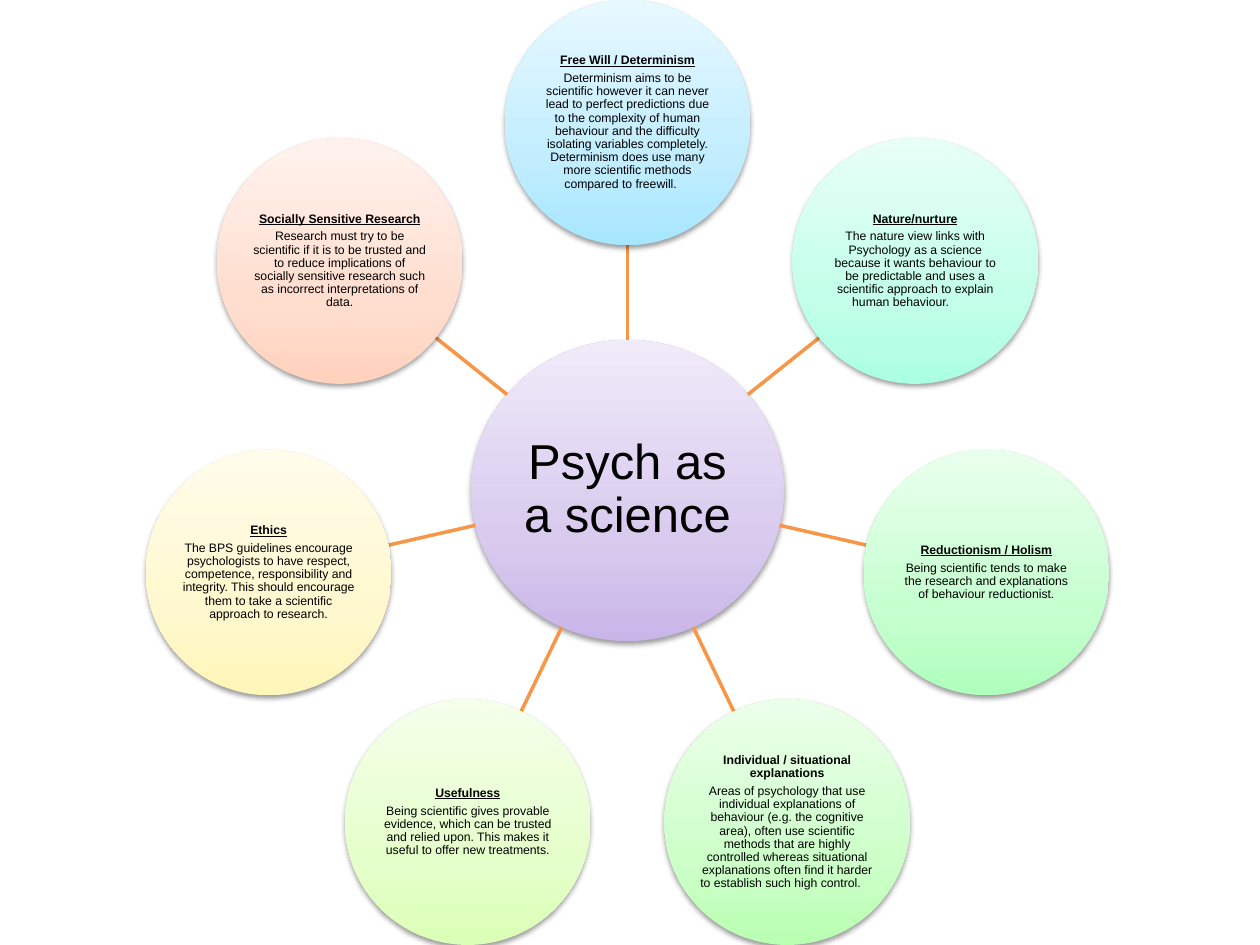
from math import cos, hypot, radians, sin

from pptx import Presentation
from pptx.dml.color import RGBColor
from pptx.enum.shapes import MSO_CONNECTOR as Connector, MSO_SHAPE as Shape
from pptx.enum.text import MSO_ANCHOR as Anchor, PP_ALIGN as Align
from pptx.oxml import parse_xml
from pptx.oxml.ns import nsdecls
from pptx.util import Cm, Pt

# Content: heading, underlined, body, gradient from bottom to top; clockwise from the top
HUB_TEXT = "Psych as a science"
HUB_COLORS = ("C9B5E8", "D8CBEE", "F0EAF9")
TOPICS = [
    ("Free Will / Determinism", True,
     "Determinism aims to be scientific however it can never lead to perfect predictions "
     "due to the complexity of human behaviour and the difficulty isolating variables "
     "completely. Determinism does use many more scientific methods compared to freewill.\t",
     ("A7E6FF", "C1EDFF", "E7F8FF")),
    ("Nature/nurture", True,
     "The nature view links with Psychology as a science because it wants behaviour to be "
     "predictable and uses a scientific approach to explain human behaviour.\t",
     ("ABFFE3", "C3FFEA", "E8FFF7")),
    ("Reductionism / Holism", True,
     "Being scientific tends to make the research and explanations of behaviour reductionist.",
     ("AFFFBD", "C6FFD0", "E9FFED")),
    ("Individual / situational explanations", False,
     "Areas of psychology that use individual explanations of behaviour (e.g. the cognitive "
     "area), often use scientific methods that are highly controlled whereas situational "
     "explanations often find it harder to establish such high control.\t",
     ("B9FFB2", "CDFFC9", "ECFFEA")),
    ("Usefulness", True,
     "Being scientific gives provable evidence, which can be trusted and relied upon. "
     "This makes it useful to offer new treatments.",
     ("DBFFB6", "E5FFCB", "F5FFEB")),
    ("Ethics", True,
     "The BPS guidelines encourage psychologists to have respect, competence, responsibility "
     "and integrity. This should encourage them to take a scientific approach to research.",
     ("FFF6B9", "FFF8CE", "FFFCEC")),
    ("Socially Sensitive Research", True,
     "Research must try to be scientific if it is to be trusted and to reduce implications of "
     "socially sensitive research such as incorrect interpretations of data.",
     ("FFD2BD", "FFDED0", "FFF2ED")),
]

# Layout in centimetres
CENTER_X, CENTER_Y = 12.65, 9.89
HUB_WIDTH, HUB_HEIGHT = 6.3, 6.07
TOPIC_SIZE = 4.95
ORBIT = 7.42
STOPS = (0, 35, 100)


def color(value):
    return RGBColor.from_string(value)


def add_bubble(page, x, y, width, height, colors, inset):
    """Add a shaded ellipse centred on x, y and return its text frame."""
    bubble = page.shapes.add_shape(Shape.OVAL, Cm(x - width / 2), Cm(y - height / 2),
                                   Cm(width), Cm(height))
    stops = "".join(f'<a:gs pos="{stop * 1000}"><a:srgbClr val="{value}"/></a:gs>'
                    for stop, value in zip(STOPS, colors))
    properties = bubble._element.spPr
    properties.append(parse_xml(
        f'<a:gradFill {nsdecls("a")} rotWithShape="1"><a:gsLst>{stops}</a:gsLst>'
        '<a:lin ang="16200000" scaled="0"/></a:gradFill>'))
    bubble.line.fill.background()
    properties.append(parse_xml(
        f'<a:effectLst {nsdecls("a")}><a:outerShdw blurRad="{Pt(3.1)}" dist="{Pt(1.6)}" '
        'dir="5400000" rotWithShape="0"><a:srgbClr val="000000"><a:alpha val="38000"/>'
        '</a:srgbClr></a:outerShdw></a:effectLst>'))
    frame = bubble.text_frame
    frame.word_wrap = True
    frame.vertical_anchor = Anchor.MIDDLE
    frame.margin_left = frame.margin_right = Cm(inset)
    frame.margin_top = frame.margin_bottom = Cm(inset)
    return frame


def write(para, text, size, bold=False, underline=False):
    para.text = text
    para.alignment = Align.CENTER
    para.line_spacing = 0.9
    para.space_after = Pt(round(size * 0.38, 1))
    font = para.font
    font.name, font.size, font.bold, font.underline = "Arial", Pt(size), bold, underline
    font.color.rgb = color("000000")


def add_spoke(page, across, down):
    """Join the hub's edge to a topic's edge along a unit direction."""
    start = 1 / hypot(across / (HUB_WIDTH / 2), down / (HUB_HEIGHT / 2))
    end = ORBIT - TOPIC_SIZE / 2
    spoke = page.shapes.add_connector(
        Connector.STRAIGHT,
        Cm(CENTER_X + start * across), Cm(CENTER_Y + start * down),
        Cm(CENTER_X + end * across), Cm(CENTER_Y + end * down))
    spoke.line.color.rgb = color("F79646")
    spoke.line.width = Pt(2)
    spoke._element.spPr.append(parse_xml(f'<a:effectLst {nsdecls("a")}/>'))


def main():
    deck = Presentation()
    deck.slide_width, deck.slide_height = Cm(25.4), Cm(19.05)
    page = deck.slides.add_slide(deck.slide_layouts[6])

    # Hub
    frame = add_bubble(page, CENTER_X, CENTER_Y, HUB_WIDTH, HUB_HEIGHT, HUB_COLORS, 0.05)
    write(frame.paragraphs[0], HUB_TEXT, 28)

    # Topics, evenly spaced around the hub
    for index, (heading, underlined, body, colors) in enumerate(TOPICS):
        angle = radians(360 * index / len(TOPICS))
        across, down = sin(angle), -cos(angle)
        add_spoke(page, across, down)
        frame = add_bubble(page, CENTER_X + ORBIT * across, CENTER_Y + ORBIT * down,
                           TOPIC_SIZE, TOPIC_SIZE, colors, 0)
        write(frame.paragraphs[0], heading, 7, bold=True, underline=underlined)
        write(frame.add_paragraph(), body, 7)

    deck.save("out.pptx")


if __name__ == "__main__":
    main()
